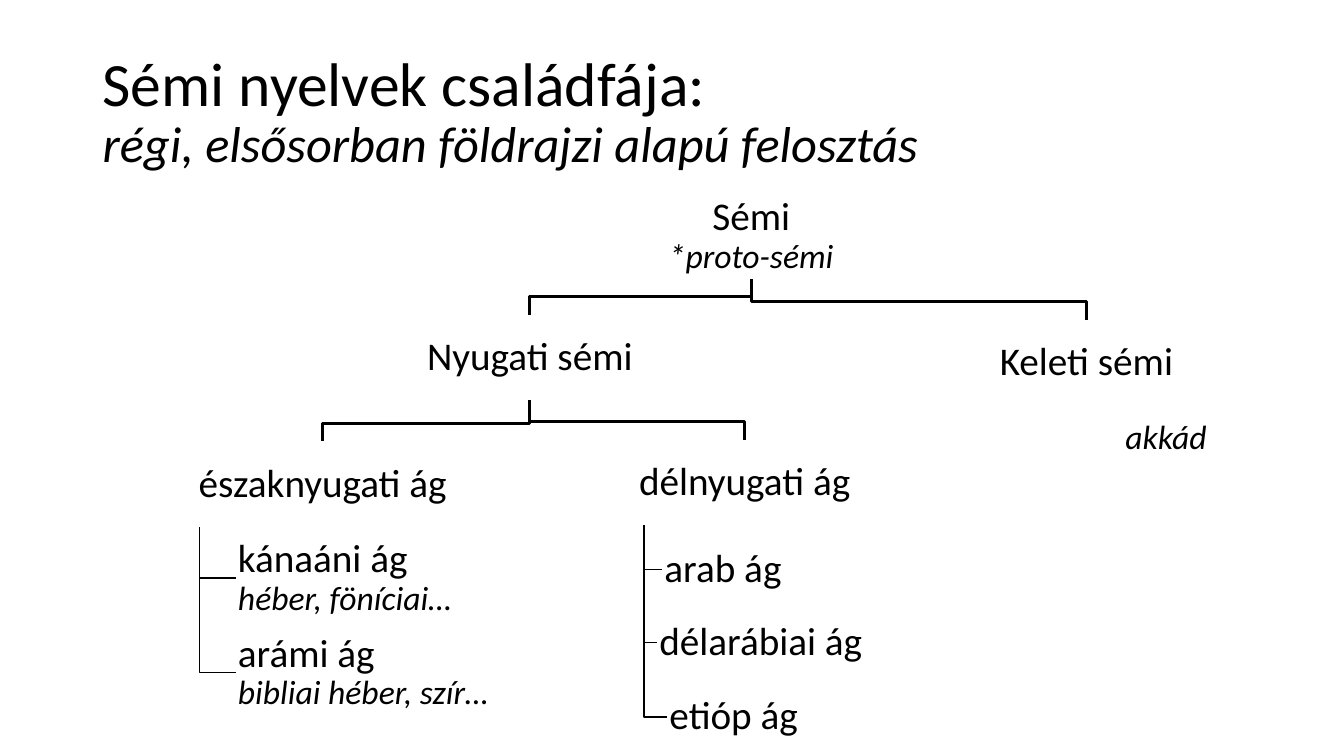
from pptx import Presentation
from pptx import util as u
from pptx.dml.color import RGBColor
from pptx.enum import text as t

COLORS = {"ink": "000000"}
FONT = "Calibri"
TITLE = ("Sémi nyelvek családfája:", "régi, elsősorban földrajzi alapú felosztás")
NODES = {
    "semi": ("Sémi", "*proto-sémi", (5.84, 1.92, 3.22, 0.85)),
    "west": ("Nyugati sémi", "", (3.67, 3.12, 3.17, 0.85)),
    "east": ("Keleti sémi", "", (9.13, 3.17, 3.29, 0.85)),
    "akkad": ("", "akkád", (10.72, 3.93, 1.69, 0.85)),
    "north": ("északnyugati ág", "", (1.67, 4.38, 3.06, 0.85)),
    "south": ("délnyugati ág", "", (6.14, 4.36, 2.49, 0.85)),
}
LEAVES = {
    "canaan": ("kánaáni ág", "héber, föníciai…", (2.34, 5.31, 3.32, 0.85)),
    "aram": ("arámi ág", "bibliai héber, szír…", (2.34, 6.25, 3.26, 0.85)),
    "arab": ("arab ág", "", (6.57, 5.36, 1.39, 0.58)),
    "delarab": ("délarábiai ág", "", (6.52, 5.95, 2.37, 0.85)),
    "ethiop": ("etióp ág", "", (6.62, 6.73, 1.69, 0.77)),
}
FORKS = {"semi": ("east", "west"), "west": ("south", "north")}
COMBS = {"south": ("ethiop", "delarab", "arab"), "north": ("aram", "canaan")}
RISE = 0.18

deck = Presentation()
deck.slide_width, deck.slide_height = u.Inches(13.33), u.Inches(7.5)
slide = deck.slides.add_slide(deck.slide_layouts[6])
ALL = {**NODES, **LEAVES}


def write(main, sub, box, sizes=(28, 24), align=t.PP_ALIGN.CENTER, pad=(0.02, 0.02)):
    frame = slide.shapes.add_textbox(*map(u.Inches, box)).text_frame
    frame.word_wrap = True
    frame.vertical_anchor = t.MSO_ANCHOR.MIDDLE
    frame.margin_left = frame.margin_right = u.Inches(pad[0])
    frame.margin_top = frame.margin_bottom = u.Inches(pad[1])
    para = frame.paragraphs[0]
    para.alignment, para.line_spacing = align, 0.9
    for words, size, slant in ((main, sizes[0], False), (sub, sizes[1], True)):
        if not words:
            continue
        if slant and main:
            para.add_line_break()
        run = para.add_run()
        run.text = words
        run.font.name, run.font.size, run.font.italic = FONT, u.Pt(size), slant
        run.font.color.rgb = RGBColor.from_string(COLORS["ink"])


def trace(points, width):
    start, *rest = [(u.Inches(x), u.Inches(y)) for x, y in points]
    pen = slide.shapes.build_freeform(*start)
    pen.add_line_segments(rest, close=False)
    branch = pen.convert_to_shape()
    branch.shadow.inherit = False
    branch.fill.background()
    branch.line.color.rgb = RGBColor.from_string(COLORS["ink"])
    branch.line.width = u.Pt(width)


for name, kids in FORKS.items():
    x, y, w, h = NODES[name][2]
    for kid in kids:
        left, top, wide, _ = NODES[kid][2]
        mid, end = x + w / 2, left + wide / 2
        trace([(mid, y + h), (mid, top - RISE), (end, top - RISE), (end, top)], 2)

for name, kids in COMBS.items():
    x, y, w, h = NODES[name][2]
    stem = x + w / 10
    for kid in kids:
        left, top, _, high = LEAVES[kid][2]
        mid = top + high / 2
        trace([(stem, y + h), (stem, mid), (left, mid)], 1)

write(*TITLE, (0.92, 0.4, 11.5, 1.45), sizes=(44, 36), align=t.PP_ALIGN.LEFT, pad=(0.1, 0.05))
for name, node in ALL.items():
    write(*node, align=t.PP_ALIGN.LEFT if name in LEAVES else t.PP_ALIGN.CENTER)

deck.save("out.pptx")
